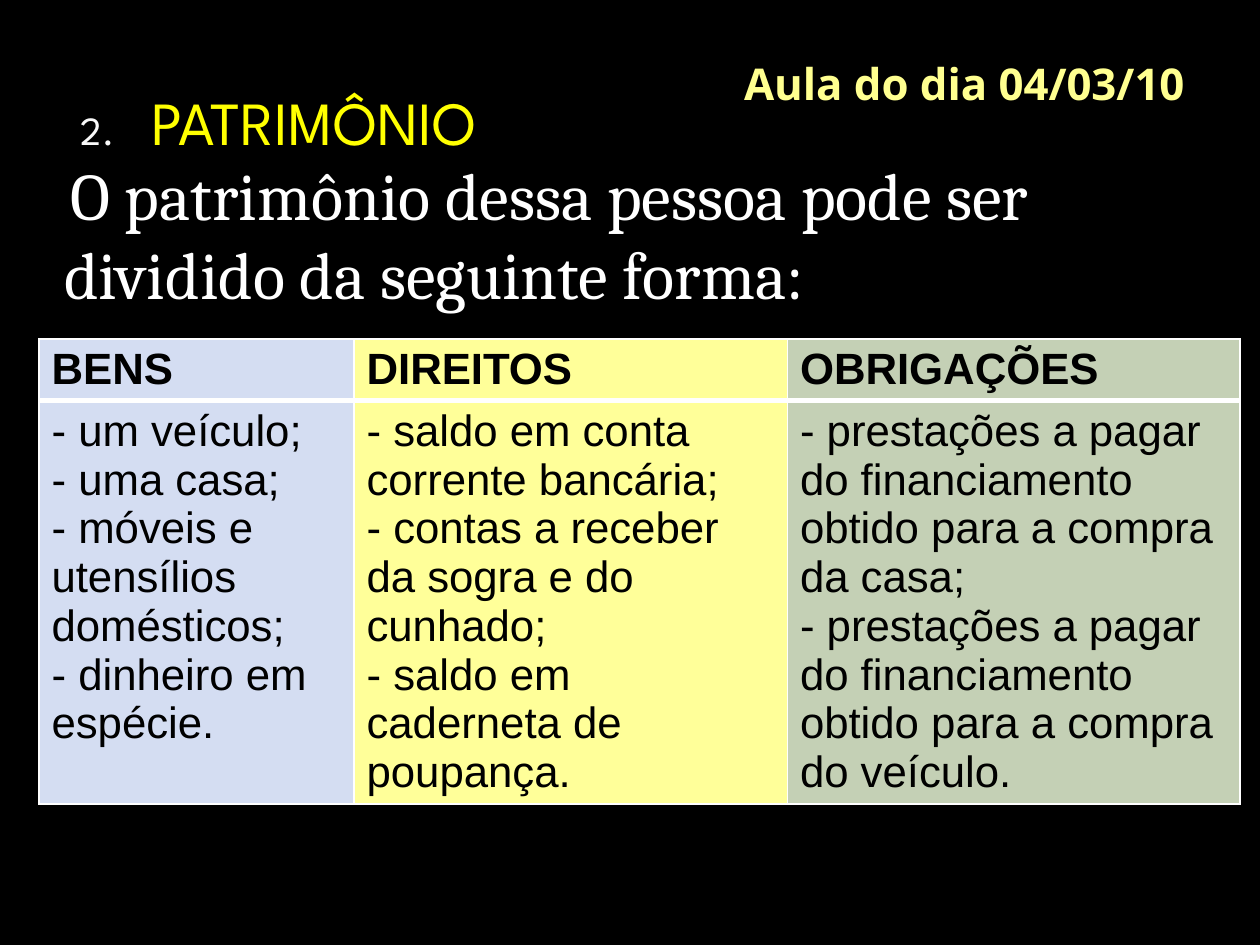
import dataclasses

import pptx
import pptx.dml.color
import pptx.enum.text
import pptx.oxml
import pptx.oxml.ns
import pptx.util

Inches = pptx.util.Inches
Pt = pptx.util.Pt
WHITE = "FFFFFF"


@dataclasses.dataclass
class Column:
    heading: str
    items: list[str]
    width: float
    fill: str


COLUMNS = [
    Column("BENS", ["- um veículo;", "- uma casa;", "- móveis e utensílios domésticos;",
                    "- dinheiro em espécie."], 2.5, "D4DDF2"),
    Column("DIREITOS", ["- saldo em conta corrente bancária;",
                        "- contas a receber da sogra e do cunhado;",
                        "- saldo em caderneta de poupança."], 3.44, "FFFF99"),
    Column("OBRIGAÇÕES", [
        f"- prestações a pagar do financiamento obtido para a compra {goal}."
        if goal == "do veículo" else
        f"- prestações a pagar do financiamento obtido para a compra {goal};"
        for goal in ("da casa", "do veículo")], 3.59, "C4D0B5"),
]
HEADING_HEIGHT, ITEMS_HEIGHT = 0.49, 3.2
CELL_FONT = {"size": Pt(25), "name": "Arial"}


def paint(target, color: str) -> None:
    """Give a fill or a font a solid colour."""
    fill = getattr(target, "fill", target)
    fill.solid()
    fill.fore_color.rgb = pptx.dml.color.RGBColor.from_string(color)


def write(paragraph, text: str, color: str, formats: dict) -> None:
    span = paragraph.add_run()
    span.text = text
    for name, value in formats.items():
        setattr(span.font, name, value)
    paint(span.font, color)


def place(shape, left: float, top: float, width: float, height: float) -> None:
    for name, value in zip(("left", "top", "width", "height"), (left, top, width, height)):
        setattr(shape, name, Inches(value))
    shape.text_frame.auto_size = pptx.enum.text.MSO_AUTO_SIZE.NONE
    shape.text_frame.word_wrap = True


def indent(paragraph, left: float, first: float) -> None:
    properties = paragraph._p.get_or_add_pPr()
    properties.set("marL", str(Inches(left)))
    properties.set("indent", str(Inches(first)))


def number(paragraph, start: int, color: str, percent: int) -> None:
    """Number a paragraph as "1." counting from start."""
    namespace = pptx.oxml.ns.nsdecls("a")
    for xml in (
        f'<a:buClr {namespace}><a:srgbClr val="{color}"/></a:buClr>',
        f'<a:buSzPct {namespace} val="{percent * 1000}"/>',
        f'<a:buFont {namespace} typeface="+mj-lt"/>',
        f'<a:buAutoNum {namespace} type="arabicPeriod" startAt="{start}"/>',
    ):
        paragraph._p.get_or_add_pPr().append(pptx.oxml.parse_xml(xml))


def border(cell, bottom: float) -> None:
    """Draw white cell borders, 1 pt wide except for the bottom one."""
    properties = cell._tc.get_or_add_tcPr()
    namespace = pptx.oxml.ns.nsdecls("a")
    sides = {"lnL": 1, "lnR": 1, "lnT": 1, "lnB": bottom}
    for position, (side, width) in enumerate(sides.items()):
        properties.insert(position, pptx.oxml.parse_xml(
            f'<a:{side} {namespace} w="{Pt(width)}"><a:solidFill>'
            f'<a:srgbClr val="{WHITE}"/></a:solidFill></a:{side}>'))


def fill_cell(cell, lines: list[str], color: str, bold: bool, bottom: float) -> None:
    paint(cell, color)
    border(cell, bottom)
    for position, line in enumerate(lines):
        frame = cell.text_frame
        paragraph = frame.add_paragraph() if position else frame.paragraphs[0]
        write(paragraph, line, "000000", CELL_FONT | {"bold": bold})


def add_table(page) -> None:
    width = sum(column.width for column in COLUMNS)
    table = page.shapes.add_table(
        2, len(COLUMNS), Inches(0.31), Inches(2.69), Inches(width),
        Inches(HEADING_HEIGHT + ITEMS_HEIGHT)).table
    for row, height in zip(table.rows, (HEADING_HEIGHT, ITEMS_HEIGHT)):
        row.height = Inches(height)
    for position, column in enumerate(COLUMNS):
        table.columns[position].width = Inches(column.width)
        fill_cell(table.cell(0, position), [column.heading], column.fill, True, 3)
        fill_cell(table.cell(1, position), column.items, column.fill, False, 1)
        # The rule under the headings is shared by both rows.
        rule = table.cell(1, position)._tc.tcPr.find(pptx.oxml.ns.qn("a:lnT"))
        rule.set("w", str(Pt(3)))


def main() -> None:
    deck = pptx.Presentation()
    deck.slide_width, deck.slide_height = Inches(10), Inches(7.5)
    page = deck.slides.add_slide(deck.slide_layouts[1])
    paint(page.background, "000000")

    title = page.shapes.title
    place(title, 0.5, 0.3, 9, 0.72)
    heading = title.text_frame.paragraphs[0]
    heading.alignment = pptx.enum.text.PP_ALIGN.RIGHT
    write(heading, "Aula do dia 04/03/10", "FFFF90",
          {"size": Pt(25), "name": "Open Sans", "bold": True})

    topic = page.placeholders[1]
    place(topic, 0.39, 0.62, 4.73, 0.86)
    entry = topic.text_frame.paragraphs[0]
    indent(entry, 0.71, -0.56)
    number(entry, 2, "F9F9F9", 65)
    write(entry, "PATRIMÔNIO", "FFFF00", {"size": Pt(35), "name": "League Spartan"})

    box = page.shapes.add_textbox(0, 0, 0, 0)
    place(box, 0.31, 1.17, 9.69, 1.8)
    sentence = box.text_frame.paragraphs[0]
    indent(sentence, 0.1, 0.05)
    sentence.space_before = Pt(7.6)
    write(sentence, "O patrimônio dessa pessoa pode ser dividido da seguinte forma:",
          WHITE, {"size": Pt(38), "name": "Cambria"})

    add_table(page)
    deck.save("out.pptx")


if __name__ == "__main__":
    main()
